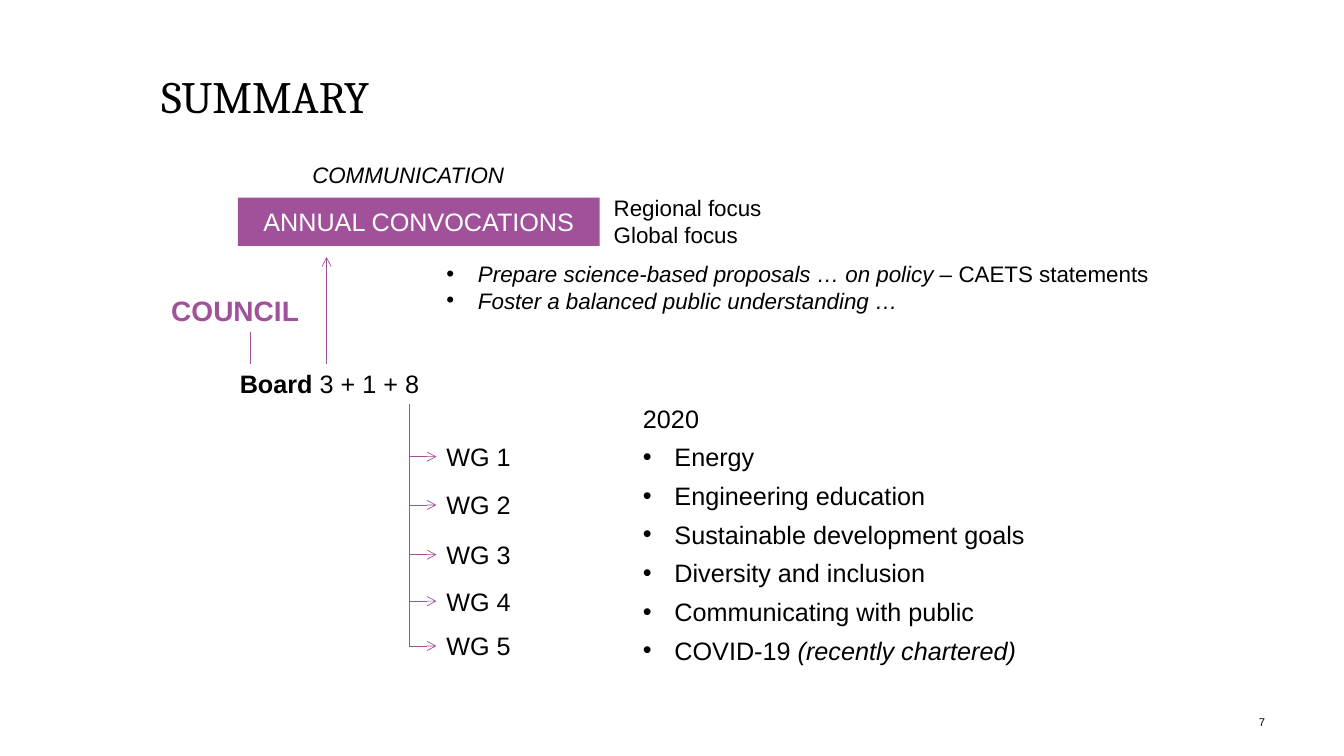
from lxml import etree
from pptx import Presentation
from pptx.dml.color import RGBColor
from pptx.enum import shapes, text
from pptx.oxml.ns import qn
from pptx.util import Pt

# Content: each paragraph is a list of (words, style) runs; style is "", "b" or "i"
TITLE = [[("SUMMARY", "")]]
PAGE = [[("7", "")]]
COMMUNICATION = [[("COMMUNICATION", "i")]]
CONVOCATIONS = [[("ANNUAL CONVOCATIONS", "")]]
FOCUS = [[("Regional focus", "")], [("Global focus", "")]]
AIMS = [
    [("Prepare science-based proposals … on policy – ", "i"), ("CAETS statements", "")],
    [("Foster a balanced public understanding …", "i")],
]
COUNCIL = [[("COUNCIL", "b")]]
BOARD = [[("Board", "b"), (" 3 + 1 + 8", "")]]
GROUPS = [("WG 1", 311.8), ("WG 2", 346.3), ("WG 3", 381.8), ("WG 4", 415), ("WG 5", 447)]
TOPICS = [[("2020", "")]] + [[(topic, "")] for topic in (
    "Energy", "Engineering education", "Sustainable development goals",
    "Diversity and inclusion", "Communicating with public")]
TOPICS.append([("COVID-19 ", ""), ("(recently chartered)", "i")])

THEME = {
    "ink": RGBColor(0, 0, 0), "accent": RGBColor(0xA0, 0x51, 0x99),
    "paper": RGBColor(255, 255, 255),
    "body": "Arial", "heading": "Cambria",
    "title": 32, "council": 20, "main": 18, "note": 16, "page": 8, "line": 0.5,
}
INDENT = 22.5
GROUP_LEFT, GROUP_WIDTH, GROUP_HEIGHT = 311.8, 93.6, 28.8
TRUNK_X, TRUNK_TOP = 292.5, 288.7

deck = Presentation()
deck.slide_width, deck.slide_height = Pt(960), Pt(540)
slide = deck.slides.add_slide(deck.slide_layouts[6])


def write(frame, paragraphs, size, color="ink", font="body", align=None,
          after=None, spacing=None, bullets_from=None):
    for i, runs in enumerate(paragraphs):
        para = frame.paragraphs[0] if i == 0 else frame.add_paragraph()
        if bullets_from is not None and i >= bullets_from:
            props = para._p.get_or_add_pPr()
            props.set("marL", str(Pt(INDENT)))
            props.set("indent", str(-Pt(INDENT)))
            etree.SubElement(props, qn("a:buFont")).set("typeface", "Arial")
            etree.SubElement(props, qn("a:buChar")).set("char", "•")
        if align is not None:
            para.alignment = align
        if after is not None:
            para.space_after = Pt(after)
        if spacing is not None:
            para.line_spacing = spacing
        para.font.name, para.font.size = THEME[font], Pt(THEME[size])
        para.font.color.rgb = THEME[color]
        styles = {style for _, style in runs}
        if len(styles) == 1:
            para.font.bold, para.font.italic = "b" in styles, "i" in styles
        for words, style in runs:
            run = para.add_run()
            run.text = words
            if len(styles) > 1:
                run.font.bold, run.font.italic = style == "b", style == "i"


def label(place, paragraphs, size, wrap=True, flush=False, **look):
    box = slide.shapes.add_textbox(*map(Pt, place))
    frame = box.text_frame
    frame.word_wrap = wrap
    if flush:
        frame.margin_left = frame.margin_right = frame.margin_top = frame.margin_bottom = 0
        frame.vertical_anchor = text.MSO_ANCHOR.MIDDLE
    else:
        frame.auto_size = text.MSO_AUTO_SIZE.SHAPE_TO_FIT_TEXT
    write(frame, paragraphs, size, **look)
    return box


def line(x1, y1, x2, y2, arrow=False):
    link = slide.shapes.add_connector(
        shapes.MSO_CONNECTOR.STRAIGHT, *map(Pt, (x1, y1, x2, y2)))
    link.line.color.rgb, link.line.width = THEME["accent"], Pt(THEME["line"])
    if arrow:
        etree.SubElement(link.line._get_or_add_ln(), qn("a:tailEnd")).set("type", "arrow")
    etree.SubElement(link._element.spPr, qn("a:effectLst"))
    return link


# Title and page number
label((851.8, 508.3, 51.8, 14.4), PAGE, "page", flush=True, align=text.PP_ALIGN.RIGHT)
label((115.2, 23.8, 694.8, 93.6), TITLE, "title", flush=True, font="heading", spacing=0.9)

# Board and its working groups
label((164.2, 259.9, 159, 28.8), BOARD, "main")
for name, top in GROUPS:
    group = label((GROUP_LEFT, top, GROUP_WIDTH, GROUP_HEIGHT), [[(name, "")]], "main")
    middle = top + GROUP_HEIGHT / 2
    line(TRUNK_X, middle, GROUP_LEFT, middle, arrow=True).end_connect(group, 1)
line(TRUNK_X, TRUNK_TOP, TRUNK_X, middle)

# Council, joined to the board
label((115.2, 205.9, 212.4, 31.7), COUNCIL, "council", color="accent")
line(178.6, 236.9, 178.6, 259.9)

# Convocations, fed by the board
banner = slide.shapes.add_shape(
    shapes.MSO_SHAPE.RECTANGLE, *map(Pt, (169.9, 141.1, 258.5, 34.6)))
banner.shadow.inherit = False
banner.fill.solid()
banner.fill.fore_color.rgb = THEME["accent"]
banner.line.fill.background()
banner.text_frame.vertical_anchor = text.MSO_ANCHOR.MIDDLE
write(banner.text_frame, CONVOCATIONS, "main", color="paper", align=text.PP_ALIGN.CENTER)
line(233.3, 259.9, 233.3, 183.6, arrow=True)
label((216, 111.6, 153.4, 26.6), COMMUNICATION, "note", wrap=False)
label((431.3, 135.4, 121, 46.1), FOCUS, "note", wrap=False)
label((311.8, 182.2, 519.1, 46.1), AIMS, "note", bullets_from=0)

# Topics of the year
label((452.2, 284.4, 355, 196.6), TOPICS, "main", after=6, bullets_from=1)

deck.save("out.pptx")
